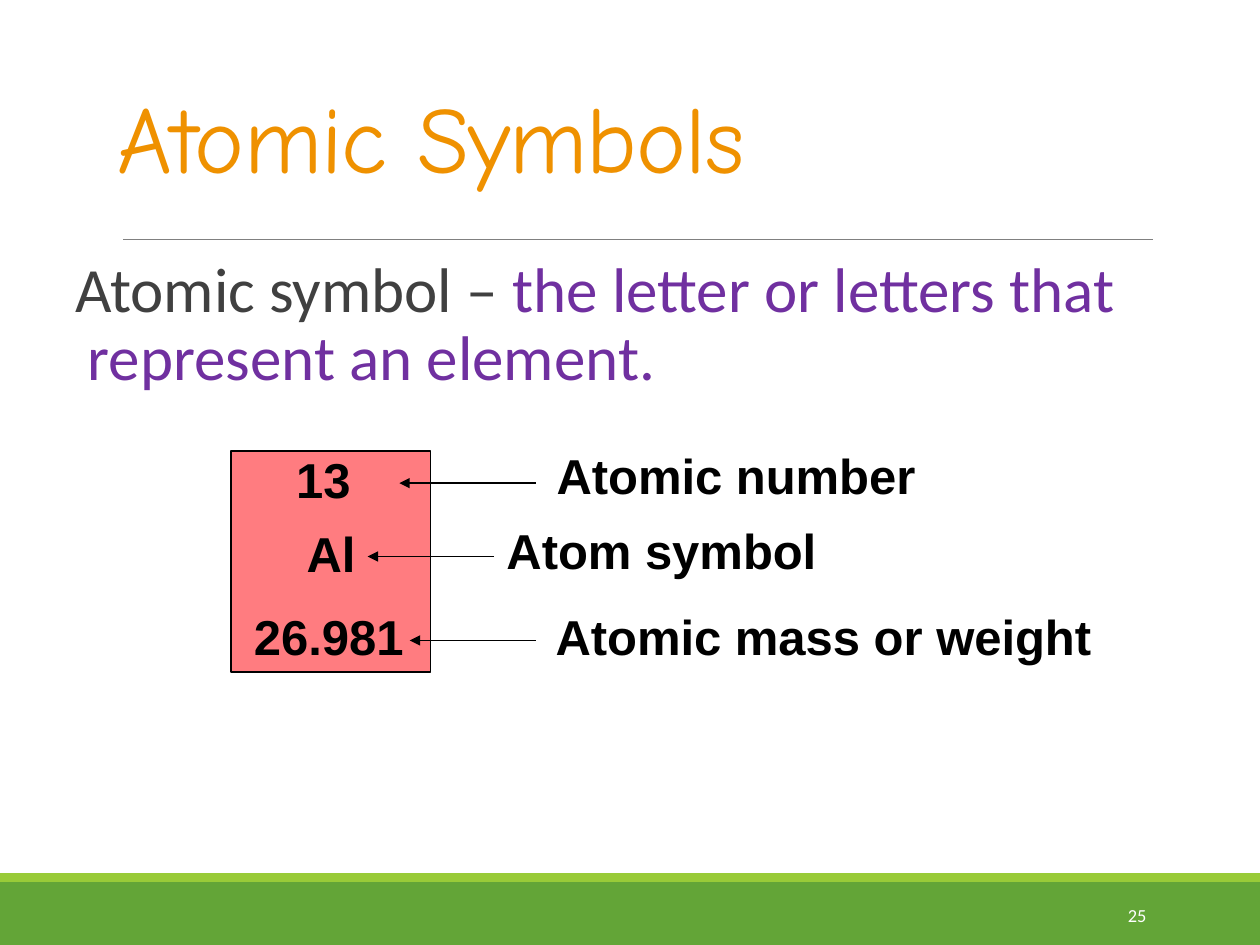
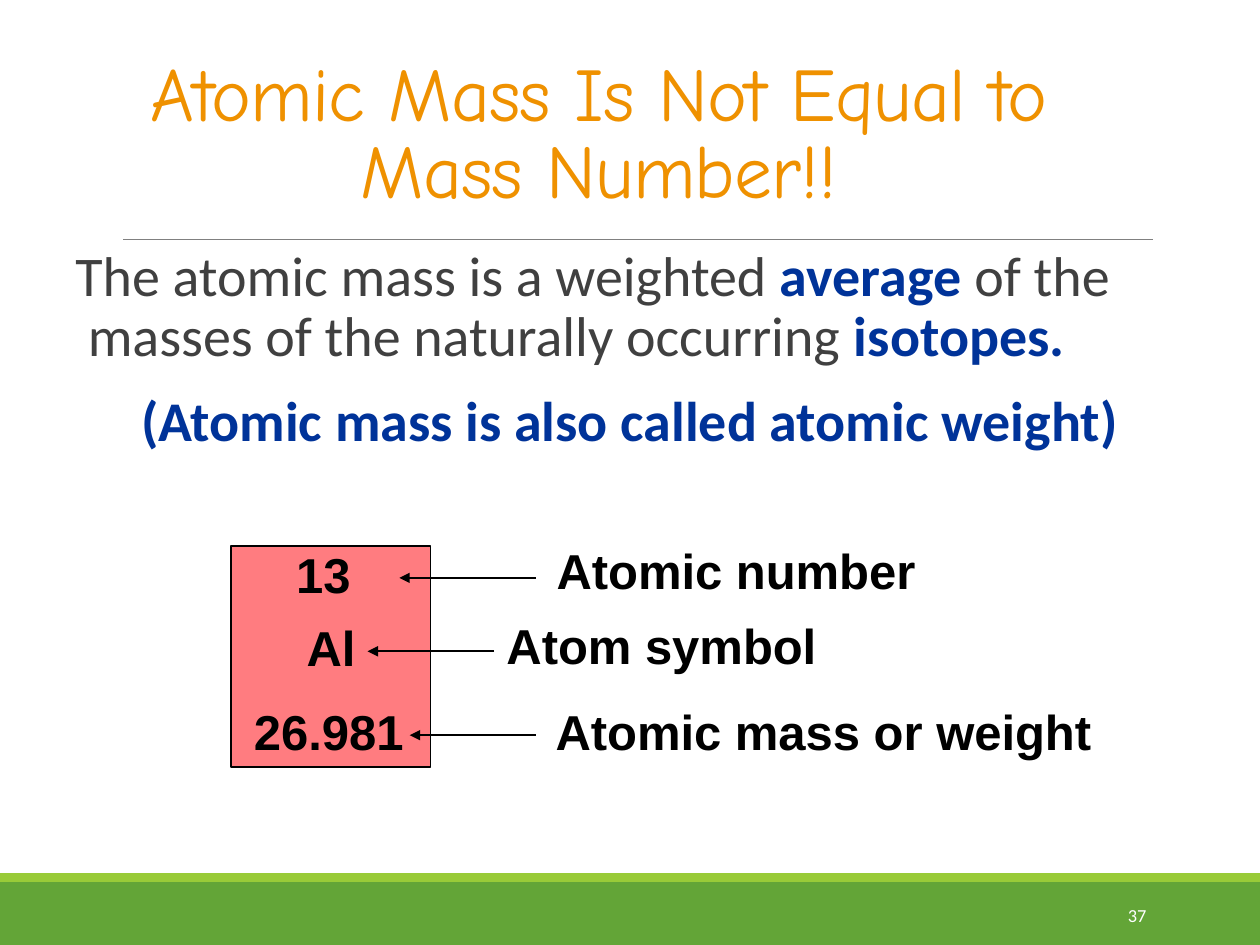
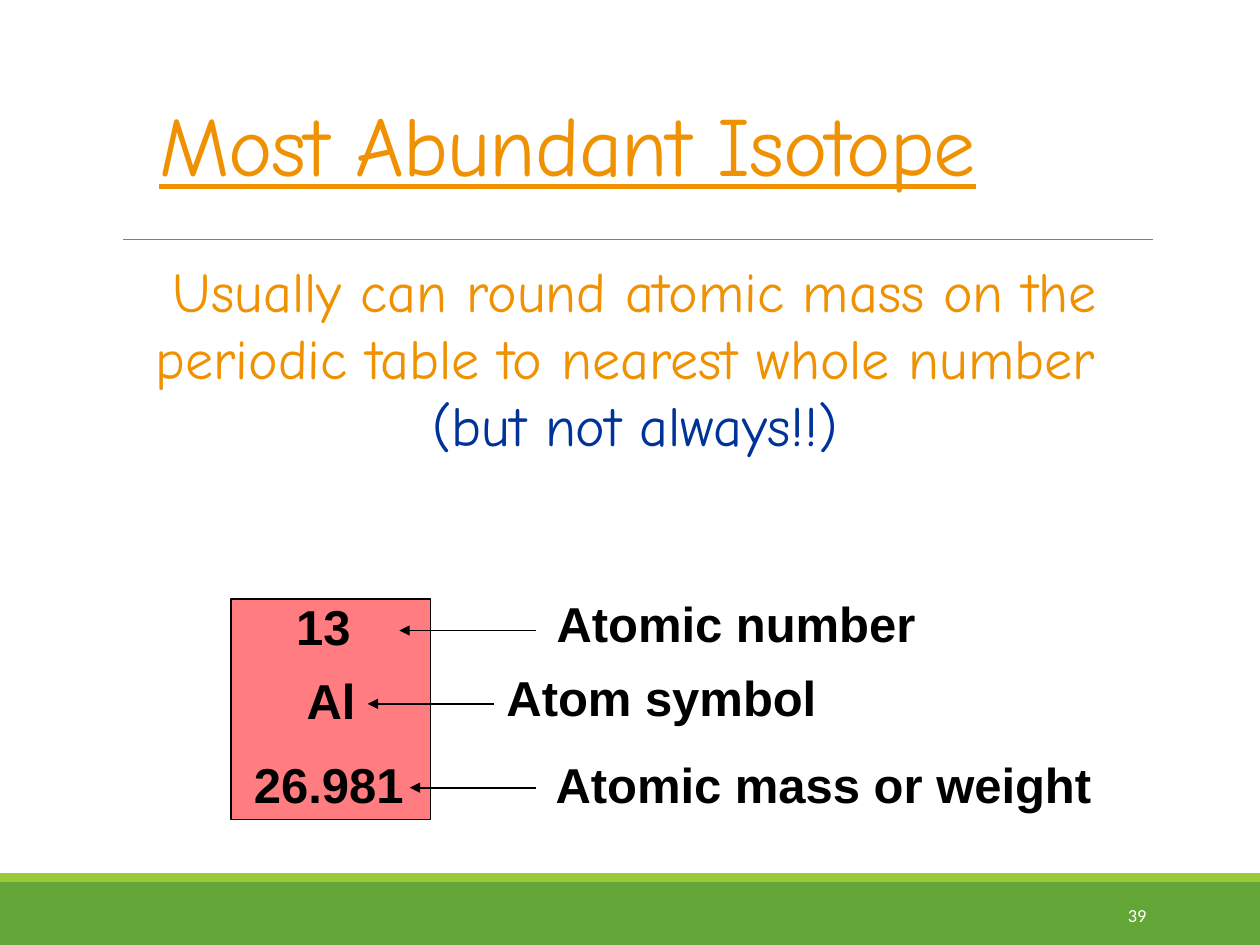
import dataclasses
import typing

import pptx
import pptx.dml.color
import pptx.enum.shapes
import pptx.enum.text
import pptx.oxml
import pptx.oxml.ns
import pptx.util

Cm = pptx.util.Cm
Align = pptx.enum.text.PP_ALIGN
Anchor = pptx.enum.text.MSO_ANCHOR

ORANGE, NAVY, PURPLE = "EF9100", "003399", "7030A0"
DARK_GRAY, GRAY, BLACK, WHITE = "404040", "808080", "000000", "FFFFFF"
GREEN, LIME, PINK = "63A537", "99CB38", "FF7C80"

TITLE_FONT, BODY_FONT, TILE_FONT = "Comic Neue", "Calibri", "Arial"
LABEL_HEIGHT = 1.45


@dataclasses.dataclass(frozen=True)
class Box:
    """A rectangle in centimetres."""
    left: float
    top: float
    width: float
    height: float

    def lengths(self) -> list[pptx.util.Length]:
        return [Cm(value) for value in dataclasses.astuple(self)]


@dataclasses.dataclass(frozen=True)
class Run:
    text: str
    color: str
    size: float
    font: str = BODY_FONT
    bold: bool = False
    underline: bool = False
    tracking: float = 0


@dataclasses.dataclass(frozen=True)
class Paragraph:
    runs: list[Run]
    align: Align = Align.LEFT
    format: dict[str, typing.Any] = dataclasses.field(default_factory=dict)
    hanging: float = 0


@dataclasses.dataclass(frozen=True)
class TileRow:
    """One value in the element tile with its arrow and label."""
    value: str
    value_left: float
    value_top: float
    value_width: float
    arrow_from: float
    arrow_to: float
    arrow_top: float
    label: str
    label_left: float
    label_top: float
    label_width: float


@dataclasses.dataclass(frozen=True)
class SlideContent:
    number: str
    title: Paragraph
    title_box: Box
    body: list[Paragraph]
    body_box: Box
    body_anchor: Anchor
    tile_top: float


TILE_ROWS = [
    TileRow("13", 5.72, -0.16, 1.63, 10.8, 8.05, 0.64, "Atomic number", 10.97, -0.24, 7.77),
    TileRow("Al", 5.93, 1.32, 1.5, 9.96, 7.41, 2.12, "Atom symbol", 9.96, 1.27, 6.78),
    TileRow("26.981", 4.87, 3.01, 3.53, 10.8, 8.26, 3.81, "Atomic mass or weight", 10.95, 3.01, 11.33),
]


def rgb(color: str) -> pptx.dml.color.RGBColor:
    return pptx.dml.color.RGBColor.from_string(color)


def apply_format(target: typing.Any, values: dict[str, typing.Any]) -> None:
    for name, value in values.items():
        setattr(target, name, value)


# Drawing helpers
def add_rectangle(slide, box: Box, fill: str, line: str | None = None) -> None:
    shape = slide.shapes.add_shape(pptx.enum.shapes.MSO_SHAPE.RECTANGLE, *box.lengths())
    shape.shadow.inherit = False
    shape.fill.solid()
    shape.fill.fore_color.rgb = rgb(fill)
    if line:
        shape.line.color.rgb = rgb(line)
        shape.line.width = pptx.util.Pt(1)
    else:
        shape.line.fill.background()


def add_line(slide, start: float, end: float, top: float, color: str, width: float,
             arrow: bool = False) -> None:
    connector = slide.shapes.add_connector(
        pptx.enum.shapes.MSO_CONNECTOR.STRAIGHT, Cm(start), Cm(top), Cm(end), Cm(top))
    connector.line.color.rgb = rgb(color)
    connector.line.width = pptx.util.Pt(width)
    if arrow:
        tail = pptx.oxml.parse_xml(f'<a:tailEnd {pptx.oxml.ns.nsdecls("a")} type="triangle"/>')
        connector.line._get_or_add_ln().append(tail)
    effects = pptx.oxml.parse_xml(f'<a:effectLst {pptx.oxml.ns.nsdecls("a")}/>')
    connector._element.spPr.append(effects)


def add_text(slide, box: Box, paragraphs: list[Paragraph], anchor: Anchor = Anchor.TOP,
             wrap: bool = True) -> None:
    frame = slide.shapes.add_textbox(*box.lengths()).text_frame
    auto_size = pptx.enum.text.MSO_AUTO_SIZE
    apply_format(frame, {
        "word_wrap": wrap,
        "vertical_anchor": anchor,
        "auto_size": auto_size.NONE if wrap else auto_size.SHAPE_TO_FIT_TEXT,
    })
    for index, content in enumerate(paragraphs):
        paragraph = frame.add_paragraph() if index else frame.paragraphs[0]
        apply_format(paragraph, {"alignment": content.align, **content.format})
        if content.hanging:
            properties = paragraph._p.get_or_add_pPr()
            properties.set("marL", str(Cm(content.hanging)))
            properties.set("indent", str(-Cm(content.hanging)))
        for piece in content.runs:
            run = paragraph.add_run()
            run.text = piece.text
            apply_format(run.font, {
                "name": piece.font, "size": pptx.util.Pt(piece.size),
                "bold": piece.bold, "underline": piece.underline,
            })
            run.font.color.rgb = rgb(piece.color)
            if piece.tracking:
                run._r.get_or_add_rPr().set("spc", str(round(piece.tracking * 100)))


# Paragraph styles
def title_paragraph(text: str, size: float, align: Align = Align.LEFT,
                    underline: bool = False) -> Paragraph:
    run = Run(text, ORANGE, size, TITLE_FONT, underline=underline, tracking=-0.5)
    return Paragraph([run], align, {"line_spacing": 0.85})


def body_paragraph(runs: list[Run], align: Align = Align.LEFT) -> Paragraph:
    spacing = {"line_spacing": 0.9, "space_before": pptx.util.Pt(12),
               "space_after": pptx.util.Pt(2)}
    return Paragraph(runs, align, spacing, hanging=0.25)


# Parts of every slide
def add_frame(slide, number: str) -> None:
    add_rectangle(slide, Box(0, 17.78, 25.4, 1.27), GREEN)
    add_rectangle(slide, Box(0, 17.6, 25.4, 0.18), LIME)
    add_line(slide, 2.48, 23.24, 4.83, GRAY, 0.5)
    add_text(slide, Box(20.62, 17.94, 2.74, 1.01),
             [Paragraph([Run(number, WHITE, 10.5)], Align.RIGHT)], Anchor.MIDDLE)


def add_tile_text(slide, text: str, left: float, top: float, width: float) -> None:
    run = Run(text, BLACK, 28, TILE_FONT, bold=True)
    add_text(slide, Box(left, top, width, LABEL_HEIGHT), [Paragraph([run])], wrap=False)


def add_element_tile(slide, top: float) -> None:
    add_rectangle(slide, Box(4.66, top, 4.02, 4.45), PINK, BLACK)
    for row in TILE_ROWS:
        add_tile_text(slide, row.value, row.value_left, top + row.value_top, row.value_width)
        add_line(slide, row.arrow_from, row.arrow_to, top + row.arrow_top, BLACK, 1, arrow=True)
        add_tile_text(slide, row.label, row.label_left, top + row.label_top, row.label_width)


SLIDES = [
    SlideContent(
        "25", title_paragraph("Atomic Symbols", 54), Box(2.12, 0.85, 19.9, 3.17),
        [body_paragraph([
            Run("Atomic symbol – ", DARK_GRAY, 36),
            Run("the letter or letters that represent an element.", PURPLE, 36),
        ])],
        Box(1.27, 5.08, 22.86, 5.72), Anchor.TOP, 9.1),
    SlideContent(
        "37", title_paragraph("Atomic Mass Is Not Equal to Mass Number!!", 43.2, Align.CENTER),
        Box(2.12, 1.27, 19.9, 3.17),
        [
            body_paragraph([
                Run("The atomic mass is a weighted ", DARK_GRAY, 32),
                Run("average ", NAVY, 32, bold=True),
                Run("of the masses of the naturally occurring ", DARK_GRAY, 32),
                Run("isotopes.", NAVY, 32, bold=True),
            ]),
            body_paragraph(
                [Run("(Atomic mass is also called atomic weight)", NAVY, 32, bold=True)],
                Align.CENTER),
        ],
        Box(1.27, 4.87, 22.86, 5.72), Anchor.TOP, 11.01),
    SlideContent(
        "39", title_paragraph("Most Abundant Isotope", 48, underline=True),
        Box(2.96, 0.85, 19.9, 3.17),
        [
            Paragraph([Run("Usually can round atomic mass on the periodic table to nearest "
                           "whole number ", ORANGE, 32, TITLE_FONT)], Align.CENTER),
            Paragraph([Run("(but not always!!)", NAVY, 32, TITLE_FONT)], Align.CENTER),
        ],
        Box(1.27, 4.87, 23.07, 4.66), Anchor.MIDDLE, 12.07),
]


def main() -> None:
    presentation = pptx.Presentation()
    apply_format(presentation, {"slide_width": Cm(25.4), "slide_height": Cm(19.05)})
    blank_layout = presentation.slide_layouts[6]
    for content in SLIDES:
        slide = presentation.slides.add_slide(blank_layout)
        add_frame(slide, content.number)
        add_text(slide, content.title_box, [content.title], Anchor.BOTTOM)
        add_text(slide, content.body_box, content.body, content.body_anchor)
        add_element_tile(slide, content.tile_top)
    presentation.save("out.pptx")


if __name__ == "__main__":
    main()
